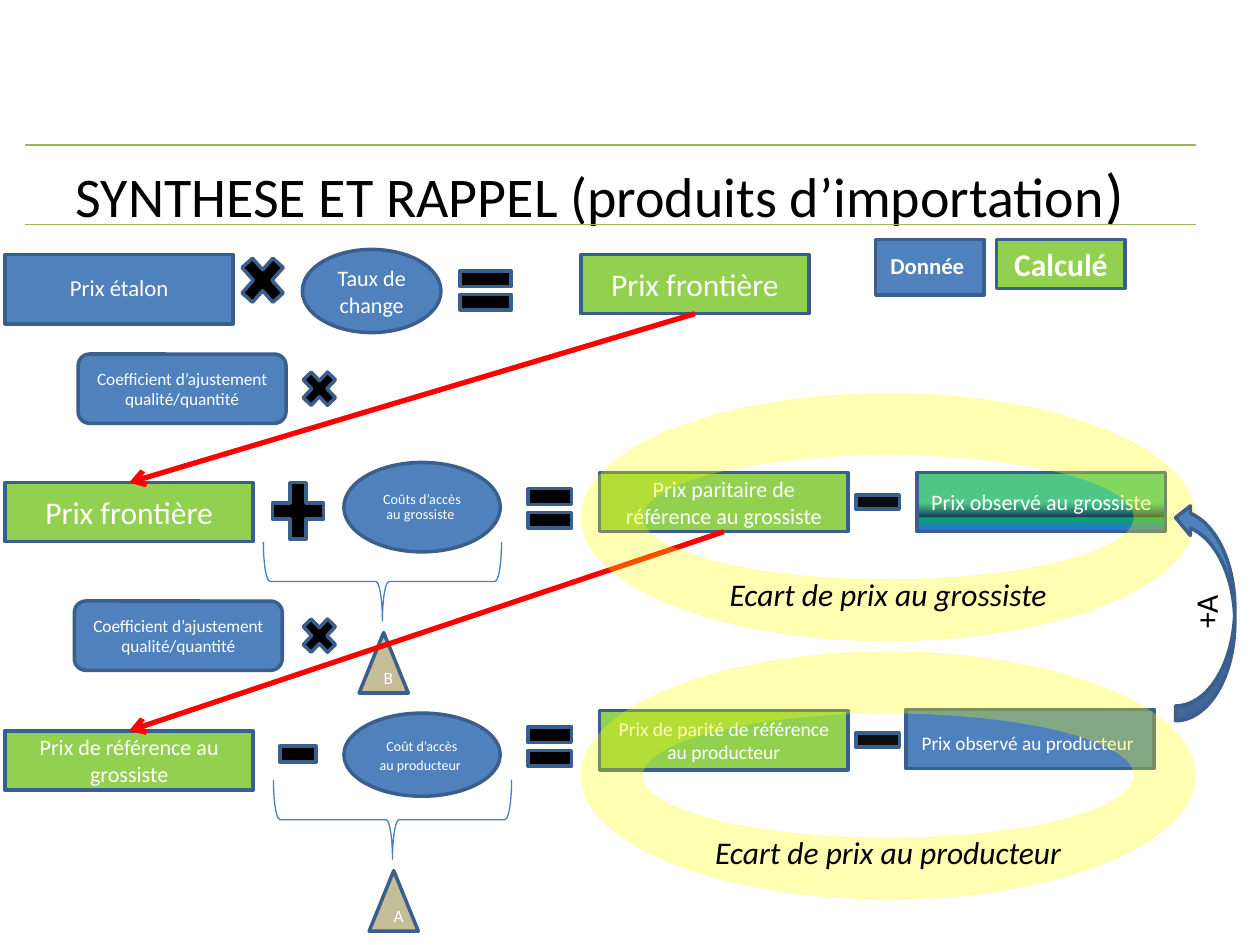
from lxml import etree
from pptx import Presentation
from pptx.dml.color import RGBColor
from pptx.enum.shapes import MSO_CONNECTOR, MSO_SHAPE
from pptx.enum.text import MSO_ANCHOR, MSO_AUTO_SIZE, PP_ALIGN
from pptx.oxml import parse_xml
from pptx.oxml.ns import nsdecls, qn
from pptx.util import Inches, Pt

FONT = "Calibri"
BLUE = RGBColor(0x4F, 0x81, 0xBD)
GREEN = RGBColor(0x92, 0xD0, 0x50)
TAN = RGBColor(0xC4, 0xBD, 0x97)
YELLOW = RGBColor(0xFF, 0xFF, 0x00)
RED = RGBColor(0xFF, 0x00, 0x00)
BLACK = RGBColor(0x00, 0x00, 0x00)
DARK = RGBColor(0x0D, 0x0D, 0x0D)
WHITE = RGBColor(0xFF, 0xFF, 0xFF)
BORDER = RGBColor(0x3A, 0x5F, 0x8C)
BRACE = RGBColor(0x4B, 0x7E, 0xBC)
RULE = RGBColor(0x98, 0xB9, 0x55)


class Diagram:
    def __init__(self, s):
        self.s = s

    def title(self, runs, x, y, w, h):
        sp = self.s.shapes.title
        sp.left, sp.top, sp.width, sp.height = map(Inches, (x, y, w, h))
        tf = sp.text_frame
        tf.auto_size = MSO_AUTO_SIZE.NONE
        tf.vertical_anchor = MSO_ANCHOR.TOP
        tf.margin_top = Inches(0.07)
        p = tf.paragraphs[0]
        p.alignment = PP_ALIGN.LEFT
        for text, size in runs:
            self.run(p, text, size, BLACK)

    def run(self, p, text, size, color, bold=False, italic=False):
        r = p.add_run()
        r.text = text
        r.font.name, r.font.size = FONT, Pt(size)
        r.font.bold, r.font.italic = bold, italic
        r.font.color.rgb = color

    def shape(self, kind, x, y, w, h, fill=None, line=BORDER, width=2):
        sp = self.s.shapes.add_shape(kind, *map(Inches, (x, y, w, h)))
        sp.shadow.inherit = False
        if fill is None:
            sp.fill.background()
        else:
            sp.fill.solid()
            sp.fill.fore_color.rgb = fill
        if line is None:
            sp.line.fill.background()
        else:
            sp.line.color.rgb = line
            sp.line.width = Pt(width)
        return sp

    def label(self, sp, text, size, color=WHITE, spacing=None, **style):
        tf = sp.text_frame
        tf.word_wrap = True
        tf.vertical_anchor = MSO_ANCHOR.MIDDLE
        p = tf.paragraphs[0]
        p.alignment = PP_ALIGN.CENTER
        if spacing:
            p.line_spacing = spacing
        self.run(p, text, size, color, **style)

    def box(self, x, y, w, h, fill, text, size, kind=MSO_SHAPE.RECTANGLE, **style):
        sp = self.shape(kind, x, y, w, h, fill)
        self.label(sp, text, size, **style)
        return sp

    def gradient(self, sp, stops):
        """Vertical gradient from (position %, colour, opacity %) stops."""
        gs = "".join(
            f'<a:gs pos="{pos * 1000}"><a:srgbClr val="{color}">'
            f'<a:alpha val="{alpha * 1000}"/></a:srgbClr></a:gs>'
            for pos, color, alpha in stops)
        old = sp.fill._xPr.find(qn("a:solidFill"))
        old.getparent().replace(old, parse_xml(
            f'<a:gradFill {nsdecls("a")} rotWithShape="1"><a:gsLst>{gs}</a:gsLst>'
            '<a:lin ang="5400000" scaled="0"/></a:gradFill>'))

    def ring(self, y, caption):
        sp = self.shape(MSO_SHAPE.DONUT, 4.61, y, 4.88, 1.97, YELLOW, None)
        color = sp.fill._xPr.find(qn("a:solidFill"))[0]
        etree.SubElement(color, qn("a:alpha")).set("val", "30000")
        self.label(sp, caption, 18, BLACK, italic=True)
        sp.text_frame.margin_top = Inches(1.27)

    def brace(self, x, y, letter):
        """Downward brace pointing at a lettered triangle."""
        sp = self.shape(MSO_SHAPE.LEFT_BRACE, x, y, 0.63, 1.89, None, BRACE, 0.75)
        sp.rotation = 270
        self.box(x + 0.13, y + 1.35, 0.39, 0.48, TAN, letter, 9.9,
                 MSO_SHAPE.ISOSCELES_TRIANGLE)

    def line(self, x1, y1, x2, y2, color, width):
        c = self.s.shapes.add_connector(
            MSO_CONNECTOR.STRAIGHT, *map(Inches, (x1, y1, x2, y2)))
        c.line.color.rgb = color
        c.line.width = Pt(width)
        etree.SubElement(c._element.spPr, qn("a:effectLst"))
        return c

    def arrow(self, source, target):
        """Red arrow from the bottom of one box to the top of another."""
        c = self.line(0, 0, 1, 1, RED, 3)
        c.begin_connect(source, 2)
        c.end_connect(target, 0)
        etree.SubElement(c.line._get_or_add_ln(), qn("a:tailEnd")).set("type", "arrow")


def main():
    prs = Presentation()
    prs.slide_width, prs.slide_height = Inches(10), Inches(7.5)
    d = Diagram(prs.slides.add_slide(prs.slide_layouts[5]))

    for y in (1.78, 1.15):
        d.line(0.2, y, 9.49, y, RULE, 0.75)
    d.title([("SYNTHESE ET RAPPEL (produits d’importation", 32), (")", 35)],
            0.5, 1.17, 9, 0.61)

    # Border price
    d.box(0.04, 2.02, 1.81, 0.55, BLUE, "Prix étalon", 13, spacing=0.9)
    d.box(2.4, 1.98, 1.1, 0.66, BLUE, "Taux de change", 12.6, MSO_SHAPE.OVAL)
    d.shape(MSO_SHAPE.MATH_MULTIPLY, 1.85, 1.96, 0.47, 0.53, BLACK)
    border_price = d.box(4.61, 2.02, 1.81, 0.47, GREEN, "Prix frontière", 18)
    d.shape(MSO_SHAPE.MATH_EQUAL, 3.58, 2.04, 0.55, 0.53, BLACK)

    # Wholesale parity
    border_input = d.box(0.04, 3.83, 1.97, 0.47, GREEN, "Prix frontière", 18)
    d.shape(MSO_SHAPE.MATH_PLUS, 2.09, 3.75, 0.55, 0.61, BLACK)
    d.box(2.73, 3.67, 1.24, 0.71, BLUE, "Coûts d’accès au grossiste ", 8.1,
          MSO_SHAPE.OVAL, spacing=0.9)
    d.shape(MSO_SHAPE.MATH_EQUAL, 4.13, 3.77, 0.47, 0.53, BLACK)
    wholesale = d.box(4.76, 3.75, 1.97, 0.47, GREEN,
                      "Prix paritaire de référence au grossiste", 12.6)

    # Producer parity
    wholesale_input = d.box(0.04, 5.8, 1.97, 0.47, GREEN,
                            "Prix de référence au grossiste", 12.6)
    d.shape(MSO_SHAPE.MATH_MINUS, 2.17, 5.72, 0.39, 0.53, BLACK)
    d.box(2.73, 5.66, 1.24, 0.66, BLUE, "Coût d’accès au producteur ", 8,
          MSO_SHAPE.OVAL, spacing=1.1)
    d.shape(MSO_SHAPE.MATH_EQUAL, 4.13, 5.66, 0.47, 0.53, BLACK)
    d.box(4.76, 5.64, 1.97, 0.47, GREEN, "Prix de parité de référence au producteur", 11.2)

    # Observed prices
    d.box(7.19, 5.63, 1.97, 0.47, BLUE, "Prix observé au producteur ", 11, spacing=1.3)
    observed = d.box(7.28, 3.75, 1.97, 0.47, GREEN, "Prix observé au grossiste", 12.6)
    d.gradient(observed, [(51, "00B050", 69), (75, "17375E", 100),
                          (75, "00B050", 100), (100, "3366FF", 100)])

    d.brace(2.8, 5.56, "A")
    d.brace(2.72, 3.67, "B")
    d.arrow(border_price, border_input)
    d.arrow(wholesale, wholesale_input)

    # Price gaps
    for ring_y, minus_y, caption in ((5.17, 5.64, "Ecart de prix au producteur"),
                                     (3.12, 3.75, "Ecart de prix au grossiste")):
        d.ring(ring_y, caption)
        d.shape(MSO_SHAPE.MATH_MINUS, 6.73, minus_y, 0.47, 0.47, DARK)
    back = d.box(9.33, 3.99, 0.47, 1.73, BLUE, "+A", 18,
                 MSO_SHAPE.CURVED_RIGHT_ARROW, color=BLACK)
    back.rotation = 180
    back.text_frame._txBody.bodyPr.set("vert", "vert")

    # Legend
    d.box(6.95, 1.9, 0.86, 0.44, BLUE, "Donnée ", 13, spacing=0.9, bold=True)
    d.box(7.91, 1.9, 1.02, 0.39, GREEN, "Calculé", 18, bold=True)

    # Adjustment coefficients
    for x, y in ((0.62, 2.81), (0.59, 4.77)):
        d.box(x, y, 1.65, 0.55, BLUE, "Coefficient d’ajustement qualité/quantité", 9.9,
              MSO_SHAPE.ROUNDED_RECTANGLE)
        d.shape(MSO_SHAPE.MATH_MULTIPLY, 2.35, y + 0.08, 0.37, 0.39, BLACK)

    prs.save("out.pptx")


if __name__ == "__main__":
    main()
